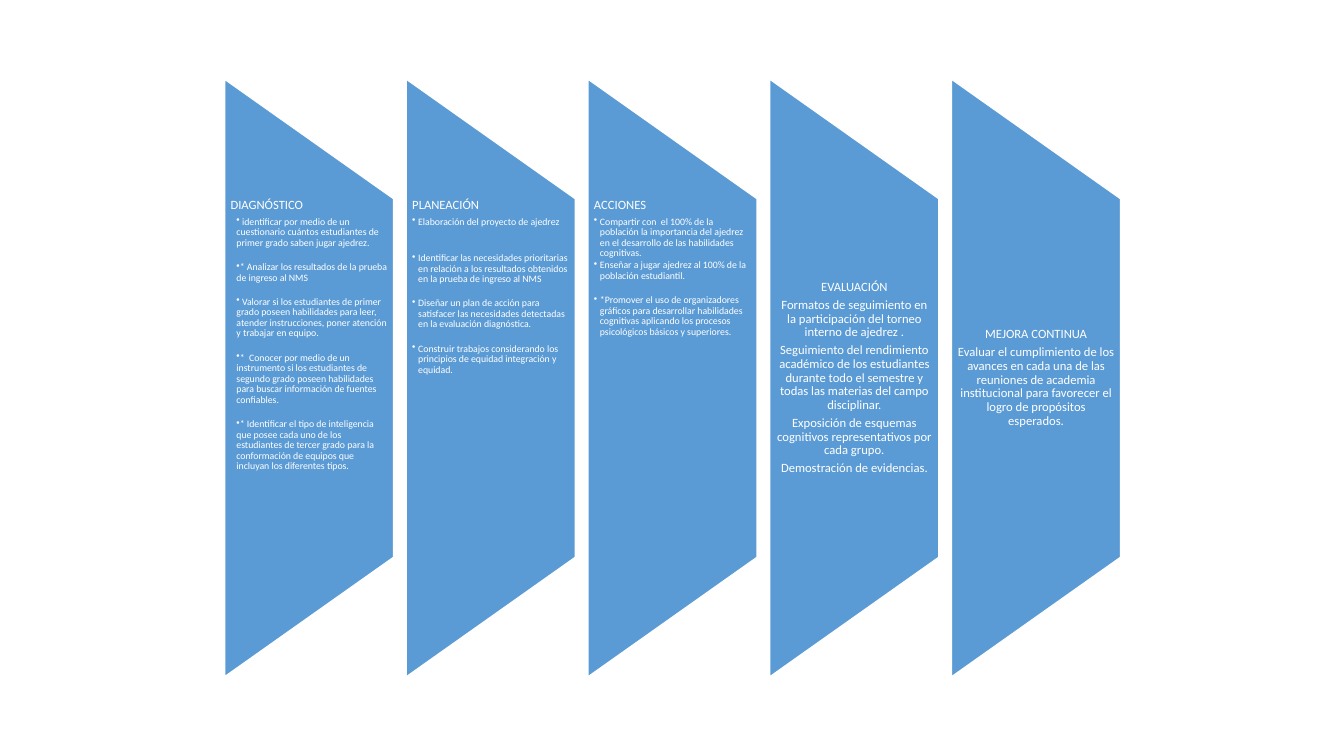
from dataclasses import dataclass

from lxml.etree import SubElement
from pptx import Presentation
from pptx.dml.color import RGBColor
from pptx.enum.shapes import MSO_SHAPE
from pptx.enum.text import MSO_ANCHOR, PP_ALIGN
from pptx.oxml.ns import qn
from pptx.util import Cm, Pt

# Each bullet: (empty lines above it, text)
BULLET_STAGES = [
    ("DIAGNÓSTICO", 0, [
        (0, " identificar por medio de un cuestionario cuántos estudiantes de primer grado saben jugar ajedrez."),
        (1, "* Analizar los resultados de la prueba de ingreso al NMS"),
        (1, " Valorar si los estudiantes de primer grado poseen habilidades para leer, "
            "atender instrucciones, poner atención y trabajar en equipo."),
        (1, "*  Conocer por medio de un instrumento si los estudiantes de segundo grado "
            "poseen habilidades para buscar información de fuentes confiables."),
        (1, "* Identificar el tipo de inteligencia que posee cada uno de los estudiantes de tercer grado "
            "para la conformación de equipos que incluyan los diferentes tipos."),
    ]),
    ("PLANEACIÓN", 0.15, [
        (0, "Elaboración del proyecto de ajedrez"),
        (2, "Identificar las necesidades prioritarias en relación a los resultados obtenidos "
            "en la prueba de ingreso al NMS"),
        (1, "Diseñar un plan de acción para satisfacer las necesidades detectadas en la evaluación diagnóstica."),
        (1, "Construir trabajos considerando los principios de equidad integración y equidad."),
    ]),
    ("ACCIONES", 0.15, [
        (0, "Compartir con  el 100% de la población la importancia del ajedrez "
            "en el desarrollo de las habilidades cognitivas."),
        (0, "Enseñar a jugar ajedrez al 100% de la población estudiantil."),
        (1, "*Promover el uso de organizadores gráficos para desarrollar habilidades cognitivas "
            "aplicando los procesos psicológicos básicos y superiores."),
    ]),
]
CENTRED_STAGES = [
    ["EVALUACIÓN",
     "Formatos de seguimiento en la participación del torneo interno de ajedrez .",
     "Seguimiento del rendimiento académico de los estudiantes durante todo el semestre "
     "y todas las materias del campo disciplinar.",
     "Exposición de esquemas cognitivos representativos por cada grupo.",
     "Demostración de evidencias."],
    ["MEJORA CONTINUA",
     "Evaluar el cumplimiento de los avances en cada una de las reuniones de academia institucional "
     "para favorecer el logro de propósitos esperados."],
]


@dataclass(frozen=True)
class Theme:
    font: str = "Calibri"
    panel: RGBColor = RGBColor(0x5B, 0x9B, 0xD5)
    white: RGBColor = RGBColor(0xFF, 0xFF, 0xFF)
    heading: float = 9
    bullet: float = 7


THEME = Theme()
SLIDE_W, SLIDE_H = 33.87, 19.05
PANEL_W, PANEL_H, PITCH = 4.26, 15.06, 4.58
TEXT_H = PANEL_H * 3 / 5
LEFT = 5.66
INSET = 0.15
EMPTY_LINE = 8.7


def add_panel(s, x):
    """Draw a trapezoid turned a quarter left, so its frame is wider than tall."""
    sp = s.shapes.add_shape(
        MSO_SHAPE.FLOWCHART_MANUAL_OPERATION,
        Cm(x + (PANEL_W - PANEL_H) / 2), Cm((SLIDE_H - PANEL_W) / 2), Cm(PANEL_H), Cm(PANEL_W))
    sp.rotation = 270
    sp.shadow.inherit = False
    sp.fill.solid()
    sp.fill.fore_color.rgb = THEME.panel
    sp.line.color.rgb = THEME.white
    sp.line.width = Pt(1)


def add_text_frame(s, x, anchor):
    sp = s.shapes.add_textbox(Cm(x), Cm((SLIDE_H - TEXT_H) / 2), Cm(PANEL_W), Cm(TEXT_H))
    tf = sp.text_frame
    tf.word_wrap = True
    tf.vertical_anchor = anchor
    tf.margin_left = tf.margin_right = Cm(INSET)
    tf.margin_top = tf.margin_bottom = 0
    return tf


def write(tf, text, size=THEME.heading, align=PP_ALIGN.LEFT, before=0, after=3.15, hanging=None):
    """Add a paragraph; a hanging indent in cm, even 0, makes it a bullet."""
    p = tf.add_paragraph() if tf.text else tf.paragraphs[0]
    p.alignment = align
    p.line_spacing = 0.9
    p.space_before, p.space_after = Pt(before), Pt(after)
    r = p.add_run()
    r.text = text
    r.font.name, r.font.size = THEME.font, Pt(size)
    r.font.color.rgb = THEME.white
    if hanging is not None:
        p.level = 1
        pPr = p._p.get_or_add_pPr()
        pPr.set("marL", str(Cm(INSET)))
        pPr.set("indent", str(-Cm(hanging)))
        SubElement(pPr, qn("a:buChar")).set("char", "•")


def main():
    prs = Presentation()
    prs.slide_width, prs.slide_height = Cm(SLIDE_W), Cm(SLIDE_H)
    s = prs.slides.add_slide(prs.slide_layouts[6])
    columns = [LEFT + i * PITCH for i in range(len(BULLET_STAGES) + len(CENTRED_STAGES))]

    for x, (heading, hanging, bullets) in zip(columns, BULLET_STAGES):
        add_panel(s, x)
        tf = add_text_frame(s, x, MSO_ANCHOR.TOP)
        write(tf, heading)
        for empty_lines, text in bullets:
            write(tf, text, size=THEME.bullet, before=empty_lines * EMPTY_LINE, after=1.05, hanging=hanging)

    for x, lines in zip(columns[len(BULLET_STAGES):], CENTRED_STAGES):
        add_panel(s, x)
        tf = add_text_frame(s, x, MSO_ANCHOR.MIDDLE)
        for text in lines:
            write(tf, text, align=PP_ALIGN.CENTER)

    prs.save("out.pptx")


if __name__ == "__main__":
    main()
